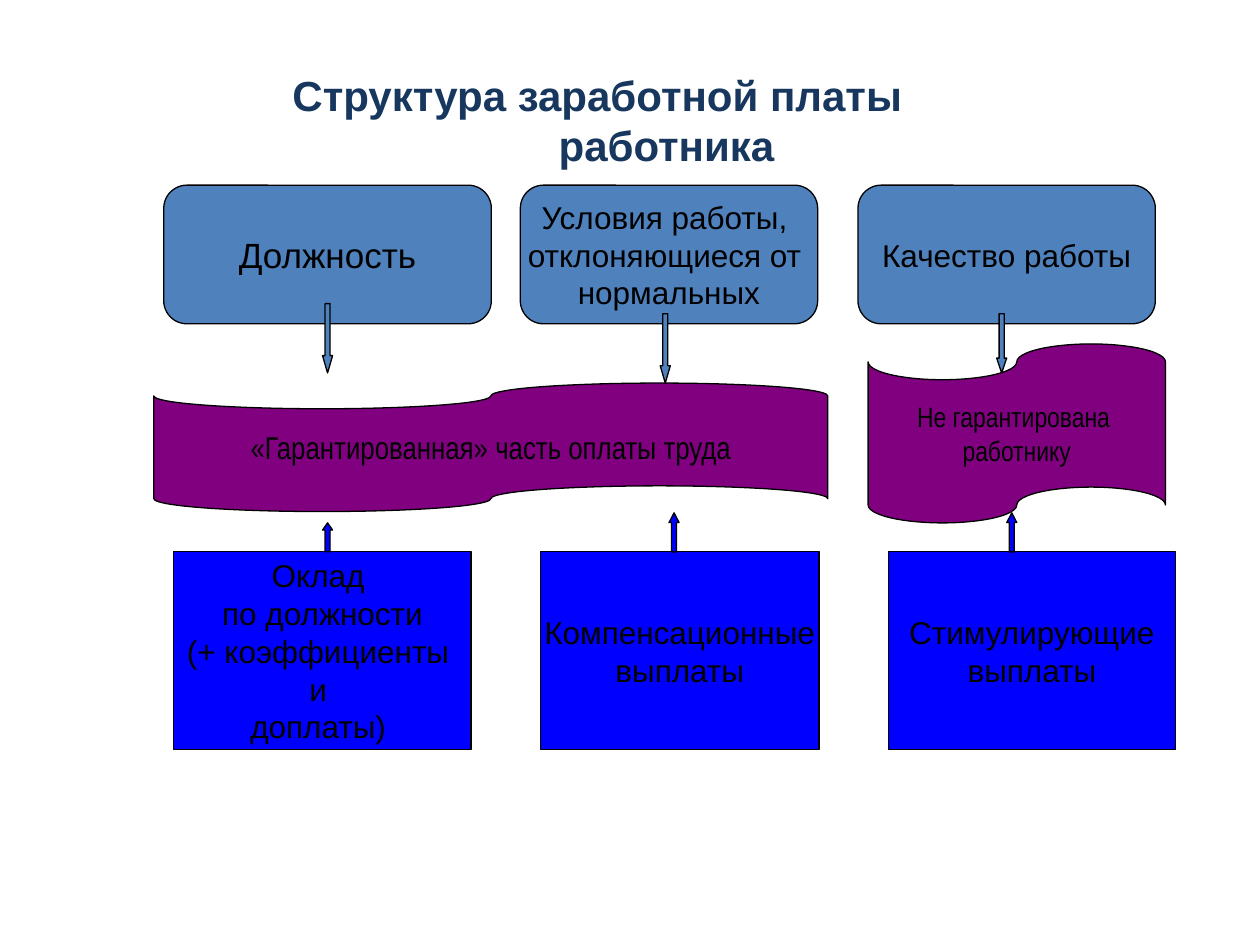
from dataclasses import dataclass

from pptx import Presentation
from pptx.dml.color import RGBColor
from pptx.enum.shapes import MSO_SHAPE
from pptx.enum.text import MSO_ANCHOR, PP_ALIGN
from pptx.util import Inches, Pt

ROUND = MSO_SHAPE.ROUNDED_RECTANGLE
RECT = MSO_SHAPE.RECTANGLE
TAPE = MSO_SHAPE.FLOWCHART_PUNCHED_TAPE
DOWN = MSO_SHAPE.DOWN_ARROW
UP = MSO_SHAPE.UP_ARROW
CENTER = PP_ALIGN.CENTER
MIDDLE = MSO_ANCHOR.MIDDLE


@dataclass(frozen=True)
class Theme:
    """Colours, fonts and type sizes of the slide."""
    navy: str = "17375E"
    steel: str = "4F81BD"
    blue: str = "0000FF"
    purple: str = "800080"
    black: str = "000000"
    sans: str = "Arial"
    narrow: str = "Arial Narrow"
    head: int = 24
    large: int = 20
    body: int = 18
    small: int = 16
    line: float = 0.75


THEME = Theme()


def put_text(frame, lines, size=THEME.body, face=THEME.sans, color=THEME.black,
             bold=False, wrap=False):
    """Fill a text frame with centred lines."""
    frame.word_wrap = wrap
    for i, line in enumerate(lines):
        para = frame.paragraphs[0] if i == 0 else frame.add_paragraph()
        para.alignment = CENTER
        run = para.add_run()
        run.text = line
        run.font.size = Pt(size)
        run.font.name = face
        run.font.bold = bold
        run.font.color.rgb = RGBColor.from_string(color)


def add_title(slide, text):
    """Add the heading, whose second line is set further right."""
    box = slide.shapes.add_textbox(Inches(1.74), Inches(0.55), Inches(6), Inches(0.8))
    frame = box.text_frame
    frame.margin_left = frame.margin_right = frame.margin_top = frame.margin_bottom = 0
    put_text(frame, [text], size=THEME.head, color=THEME.navy, bold=True, wrap=True)
    props = frame.paragraphs[0]._p.get_or_add_pPr()
    props.set("marL", str(Inches(1.1)))
    props.set("indent", str(-Inches(1.1)))


def add_box(slide, kind, fill, place, lines=(), **style):
    """Add a filled, outlined shape with optional text."""
    shape = slide.shapes.add_shape(kind, *map(Inches, place))
    shape.shadow.inherit = False
    shape.fill.solid()
    shape.fill.fore_color.rgb = RGBColor.from_string(fill)
    shape.line.color.rgb = RGBColor.from_string(THEME.black)
    shape.line.width = Pt(THEME.line)
    shape.text_frame.vertical_anchor = MIDDLE
    put_text(shape.text_frame, lines, **style)
    return shape


def add_arrow(slide, kind, fill, mid, top, high):
    """Add a thin block arrow whose head takes a quarter of its length."""
    wide = 0.08
    arrow = add_box(slide, kind, fill, (mid - wide / 2, top, wide, high))
    arrow.adjustments[1] = high / 4 / wide


def main():
    """Build the slide and save it."""
    deck = Presentation()
    deck.slide_width, deck.slide_height = Inches(10), Inches(7.5)
    slide = deck.slides.add_slide(deck.slide_layouts[6])
    add_title(slide, "Структура заработной платы работника")

    causes = [
        (1.3, 2.6, THEME.large, ["Должность"]),
        (4.13, 2.36, THEME.body,
         ["Условия работы, ", "отклоняющиеся от ", "нормальных"]),
        (6.81, 2.36, THEME.body, ["Качество работы"]),
    ]
    for left, wide, size, lines in causes:
        add_box(slide, ROUND, THEME.steel, (left, 1.47, wide, 1.1), lines, size=size)

    parts = [
        (1.38, 2.36, ["Оклад ", "по должности", "(+ коэффициенты ", "и ", "доплаты) "]),
        (4.29, 2.21, ["Компенсационные", "выплаты"]),
        (7.05, 2.28, ["Стимулирующие", "выплаты"]),
    ]
    for left, wide, lines in parts:
        add_box(slide, RECT, THEME.blue, (left, 4.38, wide, 1.57), lines)

    add_box(slide, TAPE, THEME.purple, (1.22, 3.04, 5.35, 1.02),
            ["«Гарантированная» часть оплаты труда"], face=THEME.narrow)
    for mid, top, high in [(2.6, 2.41, 0.55), (5.28, 2.49, 0.55), (7.95, 2.49, 0.47)]:
        add_arrow(slide, DOWN, THEME.steel, mid, top, high)
    for mid, top in [(2.6, 4.15), (5.35, 4.07), (8.03, 4.07)]:
        add_arrow(slide, UP, THEME.blue, mid, top, 4.38 - top)
    add_box(slide, TAPE, THEME.purple, (6.89, 2.73, 2.36, 1.42),
            ["Не гарантирована ", "работнику"], size=THEME.small, face=THEME.narrow)
    deck.save("out.pptx")


if __name__ == "__main__":
    main()
